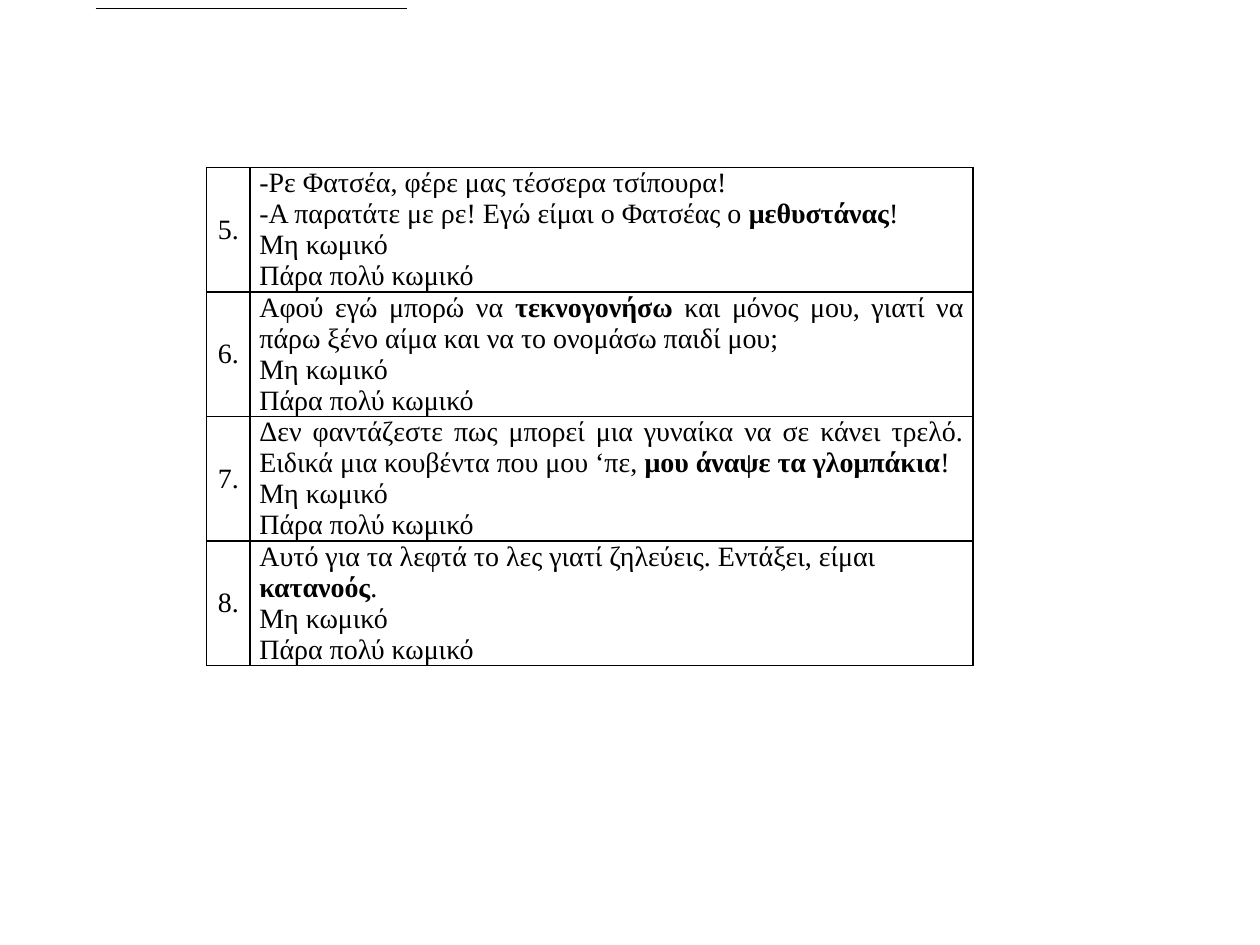
from lxml import etree
from pptx import Presentation
from pptx.dml.color import RGBColor
from pptx.enum import shapes, text
from pptx.oxml.ns import qn
from pptx.util import Pt

FONT = "Times New Roman"
BLACK = "000000"
SCALE = ["Μη κωμικό", "Πάρα πολύ κωμικό"]
LEFT, JUSTIFY = text.PP_ALIGN.LEFT, text.PP_ALIGN.JUSTIFY

# Number, alignment, lines before the bold word, bold word, ending
JOKES = [
    ("5.", LEFT,
     ["-Ρε Φατσέα, φέρε μας τέσσερα τσίπουρα!",
      "-Α παρατάτε με ρε! Εγώ είμαι ο Φατσέας ο "],
     "μεθυστάνας", "!"),
    ("6.", JUSTIFY, ["Αφού εγώ μπορώ να "], "τεκνογονήσω",
     " και μόνος μου, γιατί να πάρω ξένο αίμα και να το ονομάσω παιδί μου;"),
    ("7.", JUSTIFY,
     ["Δεν φαντάζεστε πως μπορεί μια γυναίκα να σε κάνει τρελό. "
      "Ειδικά μια κουβέντα που μου ‘πε, "],
     "μου άναψε τα γλομπάκια", "!"),
    ("8.", LEFT, ["Αυτό για τα λεφτά το λες γιατί ζηλεύεις. Εντάξει, είμαι "],
     "κατανοός", "."),
]


def color(hex_value):
    return RGBColor.from_string(hex_value)


def add_run(paragraph, words, bold=False):
    run = paragraph.add_run()
    run.text = words
    run.font.name = FONT
    run.font.size = Pt(16)
    run.font.bold = bold
    run.font.color.rgb = color(BLACK)


def add_lines(paragraph, lines):
    for index, line in enumerate(lines):
        if index:
            paragraph.add_line_break()
        add_run(paragraph, line)


def set_borders(cell, hex_value, width):
    properties = cell._tc.get_or_add_tcPr()
    for index, side in enumerate(("lnL", "lnR", "lnT", "lnB")):
        border = etree.Element(qn(f"a:{side}"), w=str(Pt(width)))
        fill = etree.SubElement(border, qn("a:solidFill"))
        etree.SubElement(fill, qn("a:srgbClr"), val=hex_value)
        properties.insert(index, border)


def style_cell(cell):
    cell.margin_left = cell.margin_right = Pt(5.4)
    cell.margin_top = cell.margin_bottom = 0
    cell.fill.background()
    set_borders(cell, BLACK, 1)


def fill_number(cell, number):
    style_cell(cell)
    cell.vertical_anchor = text.MSO_ANCHOR.MIDDLE
    paragraph = cell.text_frame.paragraphs[0]
    paragraph.alignment = text.PP_ALIGN.CENTER
    add_run(paragraph, number)


def fill_joke(cell, alignment, opening, punchline, ending):
    style_cell(cell)
    joke = cell.text_frame.paragraphs[0]
    joke.alignment = alignment
    add_lines(joke, opening)
    add_run(joke, punchline, bold=True)
    add_run(joke, ending)
    rating = cell.text_frame.add_paragraph()
    rating.alignment = LEFT
    add_lines(rating, SCALE)


def add_joke_table(slide):
    widths, row_height = (24.8, 413.2), 71.1
    frame = slide.shapes.add_table(
        len(JOKES), len(widths), Pt(118.1), Pt(95.8),
        Pt(sum(widths)), Pt(row_height * len(JOKES)))
    table = frame.table
    table.first_row = table.horz_banding = False
    for column, width in zip(table.columns, widths):
        column.width = Pt(width)
    for row, (number, *joke) in zip(table.rows, JOKES):
        row.height = Pt(row_height)
        fill_number(row.cells[0], number)
        fill_joke(row.cells[1], *joke)


def add_rule(slide, left, top, length):
    rule = slide.shapes.add_connector(
        shapes.MSO_CONNECTOR.STRAIGHT,
        Pt(left), Pt(top), Pt(left + length), Pt(top))
    rule.line.color.rgb = color(BLACK)
    rule.line.width = Pt(0.75)
    etree.SubElement(rule._element.spPr, qn("a:effectLst"))


def main():
    deck = Presentation()
    deck.slide_width, deck.slide_height = Pt(720), Pt(540)
    slide = deck.slides.add_slide(deck.slide_layouts[6])

    # Numbered jokes with their rating scale
    add_joke_table(slide)

    # Overlapping rules at the top edge
    for left in (55.4, 56.2, 56.9, 54.7):
        add_rule(slide, left, 5, 175.7)

    deck.save("out.pptx")


if __name__ == "__main__":
    main()
